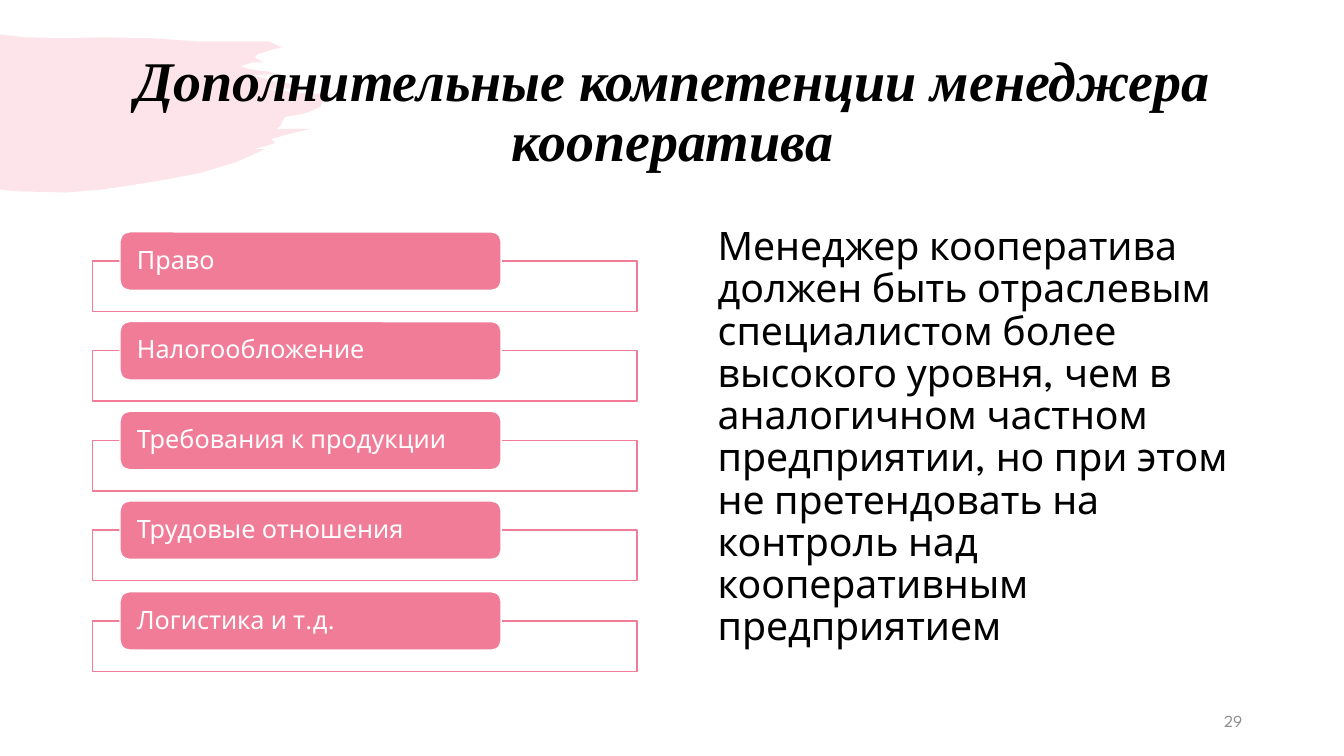
from lxml.etree import SubElement
from pptx import Presentation
from pptx.dml.color import RGBColor
from pptx.enum.shapes import MSO_SHAPE
from pptx.enum.text import MSO_ANCHOR, MSO_AUTO_SIZE, PP_ALIGN
from pptx.oxml.ns import qn
from pptx.util import Pt

PX = 9144
COLORS = {"pink": "F07C98", "white": "FFFFFF", "black": "000000", "gray": "8C8C8C"}
BODY_FONT = "League Spartan"
TITLE_FONT = "Times New Roman"
TITLE = "Дополнительные компетенции менеджера кооператива"
SKILLS = ["Право", "Налогообложение", "Требования к продукции",
          "Трудовые отношения", "Логистика и т.д."]
BODY = ("Менеджер кооператива должен быть отраслевым специалистом более "
        "высокого уровня, чем в аналогичном частном предприятии, но при этом "
        "не претендовать на контроль над кооперативным предприятием")
BRUSH = [
    (0, 34), (6, 35), (25, 37), (66, 38), (102, 37), (151, 38), (194, 41),
    (248, 41), (266, 41), (280, 47), (271, 49), (255, 54), (253, 57), (256, 59),
    (262, 62), (250, 62), (238, 66), (246, 68), (256, 70), (266, 71), (275, 74),
    (263, 74), (251, 75), (263, 78), (273, 81), (280, 82), (288, 83), (290, 85),
    (287, 88), (284, 88), (263, 88), (296, 92), (330, 94), (321, 97), (318, 106),
    (307, 111), (300, 113), (283, 116), (280, 120), (278, 125), (274, 128),
    (308, 128), (290, 132), (269, 138), (273, 142), (252, 148), (263, 148),
    (234, 161), (197, 172), (154, 180), (102, 188), (65, 191), (23, 190),
    (7, 189), (0, 188),
]


def px(*values):
    return [round(v * PX) for v in values]


def rgb(name):
    return RGBColor.from_string(COLORS[name])


def paint(sp, fill, line=None, opacity=100):
    sp.shadow.inherit = False
    sp.fill.solid()
    sp.fill.fore_color.rgb = rgb(fill)
    if opacity < 100:
        clr = sp.fill._xPr.find(qn("a:solidFill"))[0]
        SubElement(clr, qn("a:alpha")).set("val", str(opacity * 1000))
    if line:
        sp.line.color.rgb = rgb(line)
        sp.line.width = Pt(1)
    else:
        sp.line.fill.background()


def write(sp, text, size, color, font=BODY_FONT, align=PP_ALIGN.LEFT,
          anchor=MSO_ANCHOR.MIDDLE, spacing=0.9):
    tf = sp.text_frame
    tf.word_wrap = True
    tf.vertical_anchor = anchor
    tf.text = text
    p = tf.paragraphs[0]
    p.alignment = align
    p.line_spacing = spacing
    r = p.runs[0]
    r.font.size = Pt(size)
    r.font.name = font
    r.font.color.rgb = rgb(color)
    return tf


def add_text(s, box, *args, **kwargs):
    return write(s.shapes.add_textbox(*px(*box)), *args, **kwargs)


def add_brush(s):
    fb = s.shapes.build_freeform(*BRUSH[0], scale=PX)
    fb.add_line_segments(BRUSH[1:])
    paint(fb.convert_to_shape(), "pink", opacity=20)


def add_skill(s, text, top):
    frame = s.shapes.add_shape(MSO_SHAPE.RECTANGLE, *px(92, top + 29, 540, 50))
    paint(frame, "white", "pink", 90)
    pill = s.shapes.add_shape(MSO_SHAPE.ROUNDED_RECTANGLE, *px(119, top, 378, 58))
    paint(pill, "pink", "white")
    tf = write(pill, text, 18, "white")
    tf.margin_left, tf.margin_right, tf.margin_top, tf.margin_bottom = px(14, 14, 0, 0)


def main():
    prs = Presentation()
    prs.slide_width, prs.slide_height = px(1333, 750)
    s = prs.slides.add_slide(prs.slide_layouts[6])

    add_brush(s)
    tf = add_text(s, (92, 40, 1150, 145), TITLE, 40, "black", TITLE_FONT, PP_ALIGN.CENTER)
    font = tf.paragraphs[0].runs[0].font
    font.bold = font.italic = True

    for i, skill in enumerate(SKILLS):
        add_skill(s, skill, 230 + i * 357 // 4)

    tf = add_text(s, (702, 220, 540, 455), BODY, 28, "black", anchor=MSO_ANCHOR.TOP)
    tf.auto_size = MSO_AUTO_SIZE.TEXT_TO_FIT_SHAPE
    tf.paragraphs[0].space_before = Pt(10)
    add_text(s, (942, 695, 300, 40), "29", 12, "gray", align=PP_ALIGN.RIGHT, spacing=1.0)

    prs.save("out.pptx")


if __name__ == "__main__":
    main()
